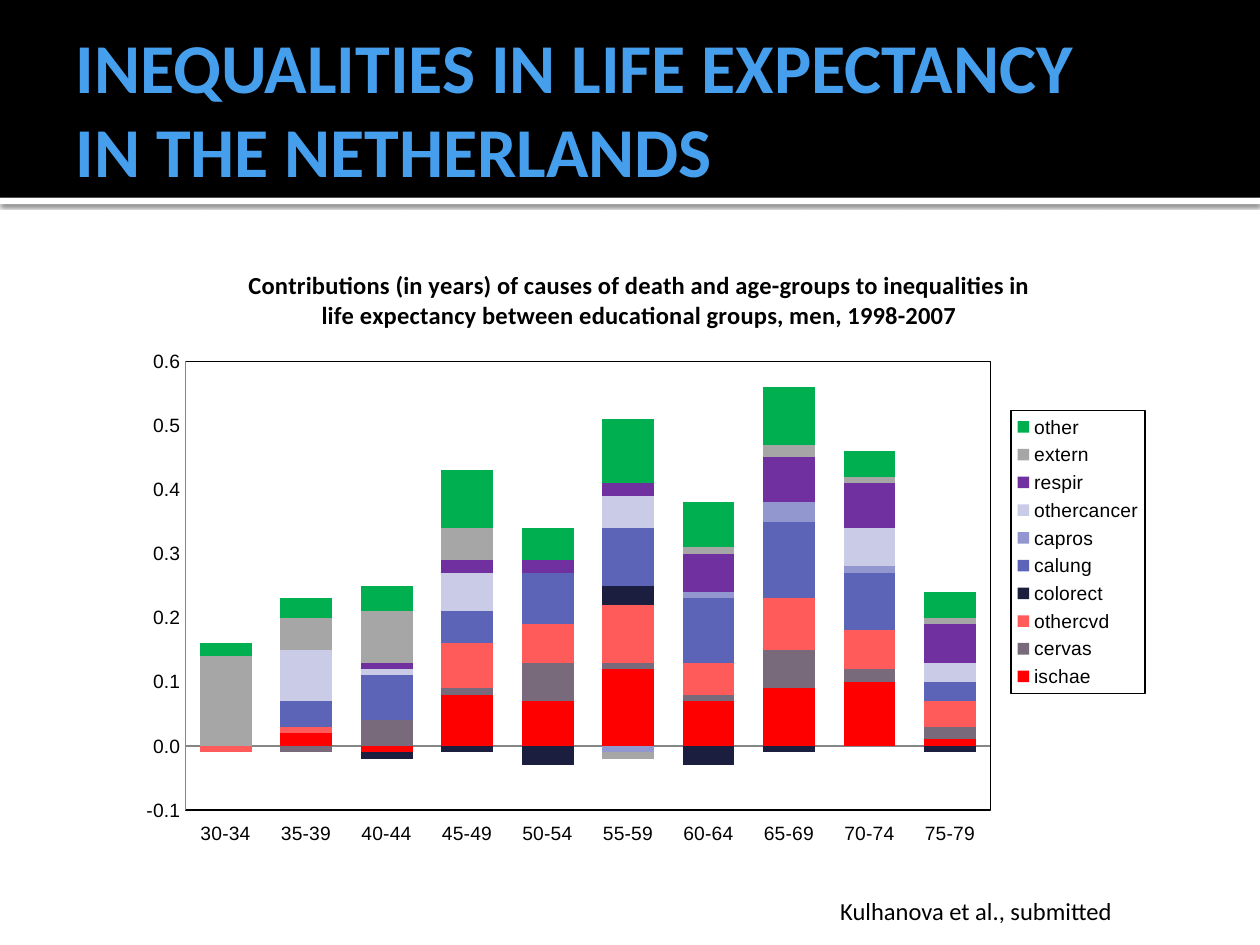
from lxml import etree
from pptx import Presentation
from pptx import util as u
from pptx.chart.data import CategoryChartData
from pptx.dml.color import RGBColor
from pptx.enum import chart as ch, shapes, text
from pptx.oxml import parse_xml
from pptx.oxml.ns import nsdecls, qn

deck = Presentation()
deck.slide_width, deck.slide_height = u.Inches(10), u.Inches(7.5)
slide = deck.slides.add_slide(deck.slide_layouts[5])


def paint(color_format, value):
    color_format.rgb = RGBColor.from_string(value)


def place_by_fraction(element, x, y, w, h, inner=False):
    """Set a manual layout, in shares of the chart's size."""
    target = '<c:layoutTarget val="inner"/>' if inner else ""
    layout = parse_xml(
        f'<c:layout {nsdecls("c")}><c:manualLayout>{target}'
        '<c:xMode val="edge"/><c:yMode val="edge"/>'
        f'<c:x val="{x}"/><c:y val="{y}"/><c:w val="{w}"/><c:h val="{h}"/>'
        "</c:manualLayout></c:layout>")
    for old in element.findall(qn("c:layout")):
        element.remove(old)
    element.insert(1 if element.tag == qn("c:legend") else 0, layout)


# Header band and the white strip below it, behind the title
band_height, strip_height = u.Inches(1.57), u.Inches(0.05)
for top, height, color in ((0, band_height, "000000"),
                           (band_height, strip_height, "FFFFFF")):
    band = slide.shapes.add_shape(shapes.MSO_SHAPE.RECTANGLE, 0, top, deck.slide_width, height)
    band.fill.solid()
    paint(band.fill.fore_color, color)
    band.line.fill.background()
    band.shadow.inherit = False
    slide.shapes._spTree.insert(2, band._element)
effects = band._element.spPr.find(qn("a:effectLst"))
effects.append(parse_xml(
    f'<a:outerShdw {nsdecls("a")} blurRad="{u.Pt(2.5)}" dist="{u.Pt(0.8)}" dir="5400000" '
    'algn="tl" rotWithShape="0"><a:srgbClr val="000000"><a:alpha val="60000"/></a:srgbClr></a:outerShdw>'))

title = slide.shapes.title
title.left, title.top, title.width, title.height = map(u.Inches, (0.5, 0.17, 9, 1.37))
heading = title.text_frame
heading.text = "INEQUALITIES IN LIFE EXPECTANCY \vIN THE NETHERLANDS"
heading.auto_size = text.MSO_AUTO_SIZE.NONE
heading.vertical_anchor = text.MSO_ANCHOR.MIDDLE
heading.margin_right = u.Inches(0.05)
line = heading.paragraphs[0]
line.alignment = text.PP_ALIGN.LEFT
line.font.name, line.font.size, line.font.bold = "Calibri", u.Pt(40), True
paint(line.font.color, "469FED")

# Contributions by cause of death, one value per age group
causes = [
    ("ischae", "FF0000", (0, 0.02, -0.01, 0.08, 0.07, 0.12, 0.07, 0.09, 0.1, 0.01)),
    ("cervas", "78697B", (0, -0.01, 0.04, 0.01, 0.06, 0.01, 0.01, 0.06, 0.02, 0.02)),
    ("othercvd", "FF5B5B", (-0.01, 0.01, 0, 0.07, 0.06, 0.09, 0.05, 0.08, 0.06, 0.04)),
    ("colorect", "1B1E3E", (0, 0, -0.01, -0.01, -0.03, 0.03, -0.03, -0.01, 0, -0.01)),
    ("calung", "5C64B7", (0, 0.04, 0.07, 0.05, 0.08, 0.09, 0.1, 0.12, 0.09, 0.03)),
    ("capros", "9297CF", (0, 0, 0, 0, 0, -0.01, 0.01, 0.03, 0.01, 0)),
    ("othercancer", "C9CBE7", (0, 0.08, 0.01, 0.06, 0, 0.05, 0, 0, 0.06, 0.03)),
    ("respir", "7030A0", (0, 0, 0.01, 0.02, 0.02, 0.02, 0.06, 0.07, 0.07, 0.06)),
    ("extern", "A6A6A6", (0.14, 0.05, 0.08, 0.05, 0, -0.01, 0.01, 0.02, 0.01, 0.01)),
    ("other", "00B050", (0.02, 0.03, 0.04, 0.09, 0.05, 0.1, 0.07, 0.09, 0.04, 0.04)),
]
contributions = CategoryChartData()
contributions.categories = [f"{age}-{age + 4}" for age in range(30, 80, 5)]
for cause, _, years in causes:
    contributions.add_series(cause, years)
chart = slide.shapes.add_chart(ch.XL_CHART_TYPE.COLUMN_STACKED,
                               *map(u.Inches, (0.98, 1.94, 8.19, 4.88)), contributions).chart
chart.font.name, chart.font.size = "Calibri", u.Pt(10)
paint(chart.font.color, "000000")

chart.has_title = True
caption = chart.chart_title.text_frame
caption.text = ("Contributions (in years) of causes of death and age-groups to inequalities in "
                "life expectancy between educational groups, men, 1998-2007")
caption_font = caption.paragraphs[0].font
caption_font.name, caption_font.size, caption_font.bold = "Calibri", u.Pt(14), True
paint(caption_font.color, "000000")

columns = chart.plots[0]
columns.gap_width, columns.overlap, columns.vary_by_categories = 55, 100, False
for series, (_, color, _) in zip(columns.series, causes):
    series.invert_if_negative = False
    series.format.fill.solid()
    paint(series.format.fill.fore_color, color)

ages, years_axis = chart.category_axis, chart.value_axis
years_axis.minimum_scale, years_axis.maximum_scale, years_axis.major_unit = -0.1, 0.6, 0.1
years_axis.has_major_gridlines = False
years_axis.tick_labels.number_format = "0.0"
years_axis.tick_labels.number_format_is_linked = False
ages.tick_label_position = ch.XL_TICK_LABEL_POSITION.LOW
for axis in (ages, years_axis):
    axis.major_tick_mark = axis.minor_tick_mark = ch.XL_TICK_MARK.NONE
    axis.format.line.width = u.Pt(0.75)
    paint(axis.format.line.color, "868686")

chart.has_legend = True
legend = chart.legend
legend.position = ch.XL_LEGEND_POSITION.RIGHT
legend.include_in_layout = False
for labels in (ages.tick_labels, years_axis.tick_labels, legend):
    labels.font.name, labels.font.size = "Arial", u.Pt(11)
    paint(labels.font.color, "000000")

plot_area = chart._chartSpace.chart.plotArea
place_by_fraction(plot_area, 0.06, 0.19, 0.78, 0.73, inner=True)
place_by_fraction(legend._element, 0.86, 0.27, 0.13, 0.46)
frame = parse_xml(f'<c:spPr {nsdecls("c", "a")}><a:noFill/><a:ln w="{u.Pt(0.75)}"><a:solidFill>'
                  '<a:srgbClr val="000000"/></a:solidFill></a:ln></c:spPr>')
legend._element.find(qn("c:txPr")).addprevious(etree.fromstring(etree.tostring(frame)))
plot_area.append(frame)

source = slide.shapes.add_textbox(*map(u.Inches, (6.57, 7.06, 2.6, 0.34))).text_frame
source.word_wrap = True
source.auto_size = text.MSO_AUTO_SIZE.SHAPE_TO_FIT_TEXT
source.text = "Kulhanova et al., submitted"
source_font = source.paragraphs[0].font
source_font.name, source_font.size = "Calibri", u.Pt(14)
paint(source_font.color, "000000")

deck.save("out.pptx")
